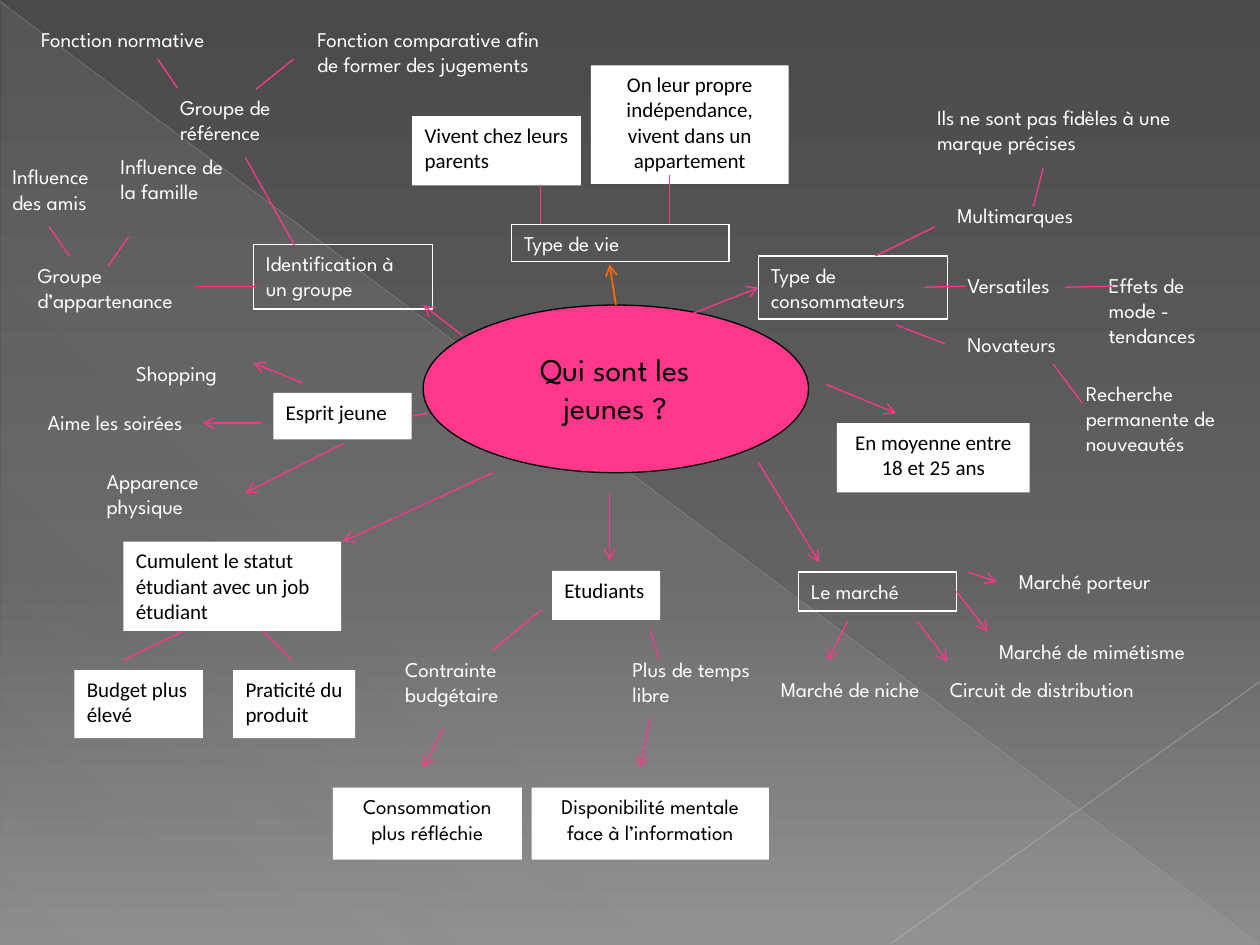
from dataclasses import dataclass

import pptx
import pptx.dml.color
import pptx.enum.shapes
import pptx.enum.text
import pptx.oxml.ns
import pptx.util
from lxml import etree

Cm, Pt = pptx.util.Cm, pptx.util.Pt
RGB = pptx.dml.color.RGBColor.from_string
SHAPE = pptx.enum.shapes.MSO_SHAPE
ALIGN = pptx.enum.text.PP_ALIGN
FIT = pptx.enum.text.MSO_AUTO_SIZE
TOP = pptx.enum.text.MSO_ANCHOR.TOP
qn = pptx.oxml.ns.qn


@dataclass(frozen=True)
class Theme:
    pink: str = "FF388C"
    orange: str = "FF6903"
    white: str = "FFFFFF"
    black: str = "000000"
    veil: str = "D2D2D2"
    card_font: str = "Calibri"
    font: str = "League Spartan"
    topic_size: int = 18
    text_size: int = 12
    thin: float = 0.75


theme = Theme()


def set_gradient(fill, element, stops, angle):
    """Give the fill stops of (position %, colour, opacity %), clockwise angle."""
    fill.gradient()
    gradient = element.find(".//" + qn("a:gradFill"))
    for child in list(gradient):
        gradient.remove(child)
    stop_list = etree.SubElement(gradient, qn("a:gsLst"))
    for position, colour, opacity in stops:
        stop = etree.SubElement(stop_list, qn("a:gs"), pos=str(position * 1000))
        value = etree.SubElement(stop, qn("a:srgbClr"), val=colour)
        etree.SubElement(value, qn("a:alpha"), val=str(opacity * 1000))
    etree.SubElement(gradient, qn("a:lin"), ang=str(angle * 60000), scaled="0")


def draw_line(page, ends, colour, width, arrow=False, opacity=100):
    connector = page.shapes.add_connector(
        pptx.enum.shapes.MSO_CONNECTOR.STRAIGHT, *[Cm(value) for value in ends])
    connector.line.color.rgb = RGB(colour)
    connector.line.width = Pt(width)
    outline = connector.line._get_or_add_ln()
    if opacity < 100:
        value = outline.find(".//" + qn("a:srgbClr"))
        etree.SubElement(value, qn("a:alpha"), val=str(opacity * 1000))
    if arrow:
        etree.SubElement(outline, qn("a:tailEnd"), type="arrow")
    etree.SubElement(connector.element.spPr, qn("a:effectLst"))
    return connector


deck = pptx.Presentation()
deck.slide_width, deck.slide_height = Cm(25.4), Cm(19.05)
page = deck.slides.add_slide(deck.slide_layouts[5])

# Backdrop
set_gradient(page.background.fill, page.element,
             [(0, "4A4A4A", 100), (60, "626262", 100), (100, "8C8C8C", 100)], 90)
triangle = page.shapes.add_shape(SHAPE.RIGHT_TRIANGLE, Cm(0.03), Cm(0.05), Cm(25.35), Cm(19))
triangle.shadow.inherit = False
triangle.line.fill.background()
set_gradient(triangle.fill, triangle.element,
             [(0, theme.veil, 10), (70, theme.veil, 8), (100, theme.veil, 1)], 133)
draw_line(page, (0, 0.03, 25.37, 19.02), "BFBFBF", 0.39, opacity=35)
draw_line(page, (25.4, 13.74, 17.96, 19.02), "C6C6C6", 0.47, opacity=45)

# Central topic
ellipse = page.shapes.add_shape(SHAPE.OVAL, Cm(8.53), Cm(6.15), Cm(7.77), Cm(3.38))
ellipse.shadow.inherit = False
ellipse.fill.solid()
ellipse.fill.fore_color.rgb = RGB(theme.pink)
ellipse.line.color.rgb = RGB(theme.black)
ellipse.line.width = Pt(theme.thin)

title = page.shapes.title
page.shapes.element.append(title.element)
title.left, title.top, title.width, title.height = Cm(10.31), Cm(6.93), Cm(4.17), Cm(1.8)
title.text_frame.word_wrap = True
title.text_frame.auto_size = FIT.NONE
title.text_frame.vertical_anchor = TOP
para = title.text_frame.paragraphs[0]
para.alignment = ALIGN.CENTER
span = para.add_run()
span.text = "Qui sont les jeunes ?"
span.font.name, span.font.size = theme.font, Pt(theme.topic_size)
span.font.color.rgb = RGB(theme.black)

# White cards, outlined frames and bare labels: text, left, top, width, height
cards = [
    ("Praticité du produit", 4.7, 13.51, 2.46, 1.37),
    ("Budget plus élevé", 1.5, 13.51, 2.59, 1.37),
    ("Esprit jeune", 5.51, 7.92, 2.79, 0.94),
    ("Vivent chez leurs parents", 8.31, 2.34, 3.4, 1.4),
    ("Etudiants", 11.13, 11.51, 2.18, 0.99),
    ("Cumulent le statut étudiant avec un job étudiant", 2.49, 10.92, 4.39, 1.8),
]
centred_cards = [
    ("On leur propre indépendance, vivent dans un appartement", 11.91, 1.32, 3.99, 2.39),
    ("En moyenne entre 18 et 25 ans", 16.87, 8.53, 3.89, 1.4),
]
outcome_cards = [
    ("Consommation plus réfléchie", 6.71, 15.88, 3.81, 1.45),
    ("Disponibilité mentale face à l’information", 10.72, 15.88, 4.78, 1.45),
]
frames = [
    ("Le marché", 16.1, 11.53, 3.18, 0.79),
    ("Type de vie", 10.31, 4.52, 4.39, 0.76),
    ("Type de consommateurs", 15.29, 5.16, 3.81, 1.27),
    ("Identification à un groupe", 5.11, 4.93, 3.61, 1.3),
]
labels = [
    ("Contrainte budgétaire", 7.92, 13.11, 3.18, 1.3),
    ("Plus de temps libre", 12.5, 13.11, 3.18, 1.3),
    ("Shopping", 2.49, 7.14, 2.87, 0.76),
    ("Aime les soirées", 0.71, 8.13, 3.73, 0.76),
    ("Apparence physique", 1.9, 9.32, 3.25, 1.3),
    ("Novateurs", 19.25, 6.55, 2.97, 0.76),
    ("Multimarques", 19.05, 3.96, 3.38, 0.76),
    ("Ils ne sont pas fidèles à une marque précises", 18.64, 1.98, 5.56, 1.27),
    ("Versatiles", 19.25, 5.36, 2.97, 0.76),
    ("Recherche permanente de nouveautés", 21.64, 7.54, 3.38, 1.8),
    ("Effets de mode - tendances", 22.1, 5.36, 3, 1.8),
    ("Marché de niche", 15.49, 13.51, 3.61, 1.27),
    ("Influence des amis", 0, 3.18, 2.69, 1.27),
    ("Groupe d’appartenance", 0.51, 5.16, 4.19, 1.27),
    ("Influence de la famille", 2.18, 2.97, 2.72, 1.8),
    ("Groupe de référence", 3.38, 1.78, 3.38, 1.3),
    ("Fonction normative", 0.58, 0.41, 4.39, 0.76),
    ("Fonction comparative afin de former des jugements", 6.15, 0.41, 5.16, 1.8),
    ("Marché porteur", 20.29, 11.33, 4.42, 0.76),
    ("Marché de mimétisme", 19.89, 12.75, 5.21, 0.76),
    ("Circuit de distribution", 18.9, 13.51, 4.42, 1.27),
]
# entries, filled, outlined, alignment, font
groups = [
    (cards, True, False, ALIGN.LEFT, theme.card_font),
    (centred_cards, True, False, ALIGN.CENTER, theme.card_font),
    (outcome_cards, True, False, ALIGN.CENTER, theme.font),
    (frames, False, True, ALIGN.LEFT, theme.font),
    (labels, False, False, ALIGN.LEFT, theme.font),
]
boxes = {}
for entries, filled, outlined, alignment, font in groups:
    for text, *place in entries:
        place = [Cm(value) for value in place]
        if filled or outlined:
            box = page.shapes.add_shape(SHAPE.RECTANGLE, *place)
            box.shadow.inherit = False
        else:
            box = page.shapes.add_textbox(*place)
        if filled:
            box.fill.solid()
            box.fill.fore_color.rgb = RGB(theme.white)
        else:
            box.fill.background()
        if outlined:
            box.line.color.rgb = RGB(theme.white)
            box.line.width = Pt(theme.thin)
        else:
            box.line.fill.background()
        frame = box.text_frame
        frame.word_wrap = True
        frame.auto_size = FIT.NONE if filled else FIT.SHAPE_TO_FIT_TEXT
        frame.vertical_anchor = TOP
        para = frame.paragraphs[0]
        para.alignment = alignment
        para.space_after = Pt(10 if filled else 0)
        span = para.add_run()
        span.text = text
        span.font.name, span.font.size = font, Pt(theme.text_size)
        span.font.color.rgb = RGB(theme.black if filled else theme.white)
        boxes[text] = box

# Links: x and y of the start, then of the end
arrows = [
    (8.94, 14.68, 8.53, 15.47), (13.11, 14.48, 12.9, 15.47), (6.1, 7.72, 5.11, 7.32),
    (12.29, 9.93, 12.29, 11.3), (9.93, 9.53, 6.91, 10.92), (16.66, 7.75, 18.06, 8.33),
    (5.28, 8.53, 4.09, 8.53), (6.93, 8.94, 4.95, 9.93), (15.29, 9.32, 16.51, 11.33),
    (9.32, 6.76, 8.53, 6.15), (17.09, 12.52, 16.69, 13.31), (18.49, 12.52, 19.1, 13.34),
    (19.51, 11.53, 20.09, 11.73),
]
plain_links = [
    (13.11, 12.7, 13.28, 13.28), (10.92, 12.29, 9.93, 13.11), (3.68, 12.73, 2.49, 13.31),
    (5.31, 12.73, 5.89, 13.31), (18.85, 4.57, 17.65, 5.16), (19.05, 6.93, 18.06, 6.55),
    (21.03, 3.38, 20.83, 4.17), (19.46, 5.77, 18.64, 5.79), (13.49, 3.53, 13.49, 4.52),
    (10.9, 4.52, 10.9, 3.73), (21.23, 7.34, 21.82, 8.13), (22.43, 5.77, 21.46, 5.79),
    (5.16, 5.77, 3.96, 5.77), (0.99, 4.57, 1.4, 5.16), (2.59, 4.78, 2.18, 5.36),
    (4.95, 3.18, 5.94, 4.95), (3.18, 1.19, 3.58, 1.78), (5.92, 1.19, 5.16, 1.8),
]
for links, arrow in ((arrows, True), (plain_links, False)):
    for ends in links:
        draw_line(page, ends, theme.pink, theme.thin, arrow)

# Links joined to a shape
link = draw_line(page, (12.42, 6.15, 12.29, 5.33), theme.orange, 1, arrow=True)
link.begin_connect(ellipse, 0)
link = draw_line(page, (13.89, 6.35, 15.29, 5.79), theme.pink, theme.thin, arrow=True)
link.end_connect(boxes["Type de consommateurs"], 1)
link = draw_line(page, (8.3, 8.39, 8.61, 8.33), theme.pink, theme.thin)
link.begin_connect(boxes["Esprit jeune"], 3)
link = draw_line(page, (19.28, 11.92, 19.91, 12.73), theme.pink, theme.thin, arrow=True)
link.begin_connect(boxes["Le marché"], 3)

deck.save("out.pptx")
